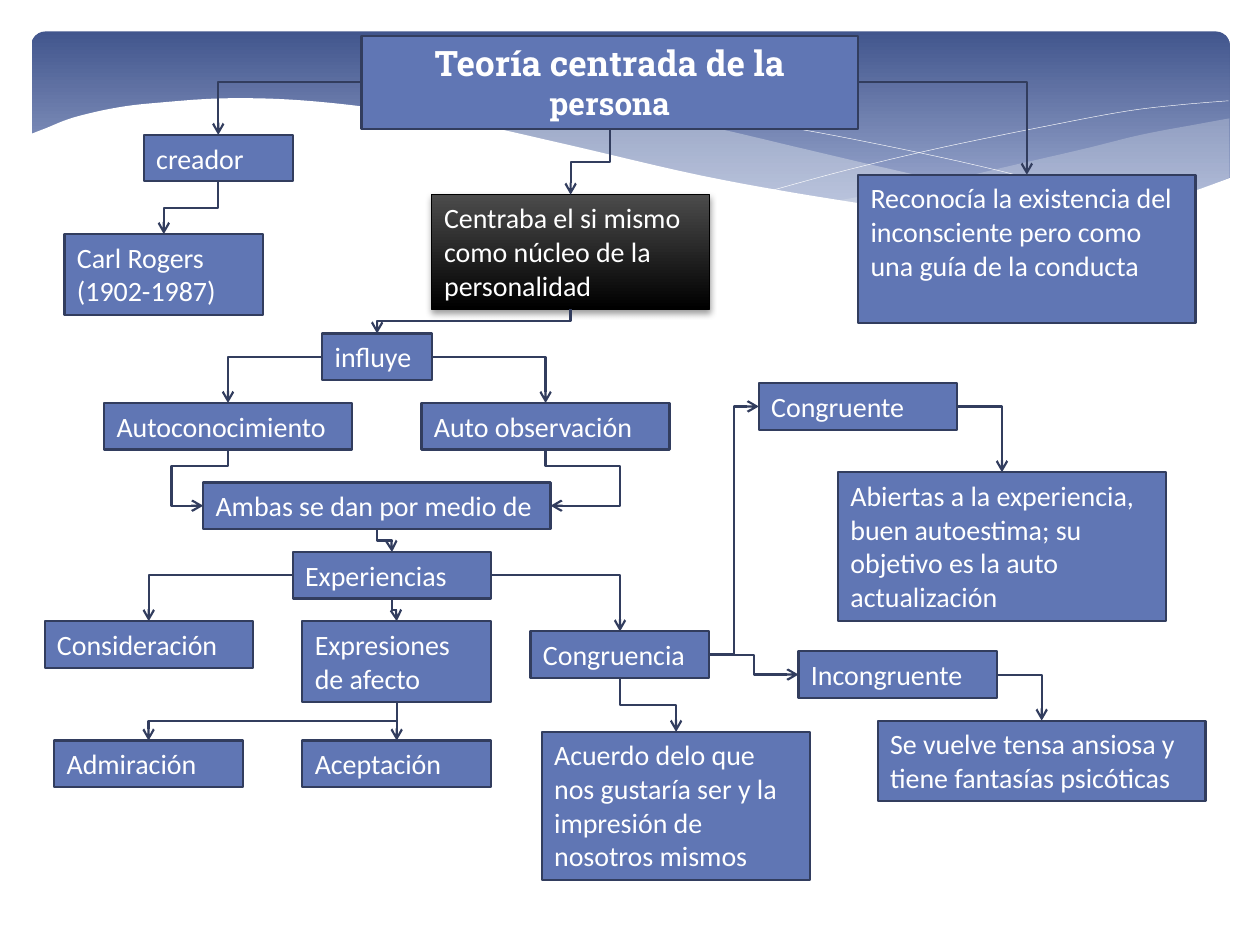
from lxml.etree import SubElement
from pptx import Presentation
from pptx.dml.color import RGBColor
from pptx.enum.shapes import MSO_CONNECTOR as Link, MSO_SHAPE as Preset
from pptx.enum.text import MSO_ANCHOR as Anchor, PP_ALIGN as Align
from pptx.oxml.ns import qn
from pptx.util import Pt

COLORS = {
    "box": "6076B4", "edge": "323D5E", "white": "FFFFFF", "black": "000000",
    "charcoal": "4B4B4B", "band_top": "42568D", "band_end": "A0ADD2", "mist": "E4E9EF",
}
ROW, PADDING = 19.4, 7.2
TOP, LEFT, BOTTOM, RIGHT = range(4)

# Each wave is a chain of smooth edges; corners lie where two edges meet.
RIGHT_WAVE = [
    [(702.5, 67.7), (682.6, 71.3), (652.3, 77), (619.9, 85), (579.6, 94.3),
     (542.2, 103), (508.3, 109.4), (475.9, 115.2)],
    [(475.9, 115.2), (497.5, 118.1), (527, 121), (553.7, 123.1), (578.2, 123.8),
     (601.2, 123.8), (621.4, 122.4), (645.8, 118.8), (668.2, 113.8),
     (683.3, 109.4), (702.5, 101.5)],
]
MIDDLE_WAVE = [
    [(643, 120.2), (602.6, 114.5), (558, 107.3), (508.3, 96.5), (452.9, 83.5),
     (409.7, 73.4), (370.1, 66.2), (334.8, 61.9), (302.4, 59), (273.6, 57.6),
     (247.7, 57.6), (225.4, 59), (205.9, 61.9)],
    [(205.9, 61.9), (246.2, 67.7), (290.9, 76.3), (323.3, 83.5), (381.6, 97.2),
     (432.7, 108), (478.8, 115.9), (519.8, 121), (556.6, 123.8), (589, 124.6),
     (617, 123.1), (643, 120.2)],
]
FALLING_LINE = [[(222.5, 64.8), (236.2, 61.9), (261.4, 59.8), (299.5, 58.3),
                 (337.7, 59.8), (383.8, 63.4), (437.8, 70.6), (500.4, 82.1),
                 (572.4, 97.9), (653, 119.5)]]
RISING_LINE = [[(441.4, 108.7), (483.8, 97.2), (538.6, 84.2), (601.9, 71.3),
                (644.4, 63.4), (675.4, 59.8), (702, 57.6)]]
WHITE_WAVE = [
    [(703.4, 101.5), (676.8, 110.9), (647.3, 118.1), (612, 122.4), (571, 123.1),
     (522.7, 120.2), (466.6, 112.3), (399.6, 100.1), (321.8, 82.1), (262.8, 69.1),
     (210.2, 61.2), (165.6, 56.9), (127.4, 56.2), (95, 58.3), (68.4, 61.2),
     (42.5, 67), (25.9, 73.4), (16.6, 77)],
    [(16.6, 77), (16.6, 161.3)],
    [(16.6, 161.3), (703.4, 161.3)],
]

TITLE = [("Teoría centrada de la ", 20), ("persona", 18)]
# name: (text, left, top, width, rows)
BOXES = {
    "rogers": ("Carl Rogers\n(1902-1987)", 36.9, 133.8, 113.4, 2),
    "creator": ("creador", 82.2, 77.1, 85.1, 1),
    "self": ("Centraba el si mismo como núcleo de la personalidad", 246.7, 111.3, 158.7, 3),
    "unconscious": ("Reconocía la existencia del inconsciente pero como una guía de la conducta",
                    490.4, 99.9, 192.8, 4),
    "influences": ("influye", 184.2, 190.6, 62.6, 1),
    "knowledge": ("Autoconocimiento", 59.5, 230.3, 141.7, 1),
    "observation": ("Auto observación", 240.9, 230.3, 141.7, 1),
    "both": ("Ambas se dan por medio de", 116.1, 275.7, 198.5, 1),
    "experiences": ("Experiencias", 167.3, 315.5, 113.3, 1),
    "congruence": ("Congruencia", 303.2, 360.8, 102.2, 1),
    "affection": ("Expresiones de afecto", 172.8, 355, 107.8, 2),
    "regard": ("Consideración", 25.5, 355, 119.1, 1),
    "admiration": ("Admiración", 31, 423.2, 107.8, 1),
    "acceptance": ("Aceptación", 172.8, 423.2, 107.8, 1),
    "open": ("Abiertas a la experiencia, buen autoestima; su objetivo es la auto actualización",
             478.9, 269.9, 187.3, 4),
    "incongruent": ("Incongruente", 456.3, 372.2, 113.3, 1),
    "congruent": ("Congruente", 433.6, 219, 113.3, 1),
    "agreement": ("Acuerdo delo que nos gustaría ser y la impresión de nosotros mismos",
                  309.6, 418.2, 153.4, 4),
    "tense": ("Se vuelve tensa ansiosa y tiene fantasías psicóticas", 501.6, 411.8, 187.3, 2),
}
# start, its side, end, its side, bend adjustments
LINKS = [
    ("title", LEFT, "creator", TOP),
    ("creator", BOTTOM, "rogers", TOP),
    ("title", BOTTOM, "self", TOP),
    ("title", RIGHT, "unconscious", TOP),
    ("self", BOTTOM, "influences", TOP),
    ("influences", LEFT, "knowledge", TOP),
    ("influences", RIGHT, "observation", TOP),
    ("knowledge", BOTTOM, "both", LEFT, 0.29, 2.27),
    ("observation", BOTTOM, "both", RIGHT, 0.29, 14.9),
    ("both", BOTTOM, "experiences", TOP),
    ("experiences", LEFT, "regard", TOP),
    ("experiences", BOTTOM, "affection", TOP),
    ("experiences", RIGHT, "congruence", TOP),
    ("affection", BOTTOM, "admiration", TOP),
    ("affection", BOTTOM, "acceptance", TOP),
    ("congruence", BOTTOM, "agreement", TOP),
    ("congruence", RIGHT, "congruent", LEFT),
    ("congruence", RIGHT, "incongruent", LEFT),
    ("congruent", RIGHT, "open", TOP),
    ("incongruent", RIGHT, "tense", TOP),
]


def color(name):
    return RGBColor.from_string(COLORS[name])


def fill_gradient(shape, *stops):
    shape.fill.gradient()
    shape.fill.gradient_angle = 270
    for stop, (name, position) in zip(shape.fill.gradient_stops, stops):
        stop.color.rgb, stop.position = color(name), position


def smooth_curve(points, steps=6):
    """Catmull-Rom spline through the points."""
    padded = [points[0], *points, points[-1]]
    curve = [points[0]]
    for a, b, c, d in zip(padded, padded[1:], padded[2:], padded[3:]):
        for t in (step / steps for step in range(1, steps + 1)):
            curve.append(tuple(
                (2 * q + (r - p) * t + (2 * p - 5 * q + 4 * r - s) * t ** 2
                 + (3 * q - p - 3 * r + s) * t ** 3) / 2
                for p, q, r, s in zip(a, b, c, d)))
    return curve


def add_wave(page, edges, fill=None, opacity=100):
    points = [(Pt(x), Pt(y)) for edge in edges for x, y in smooth_curve(edge)]
    builder = page.shapes.build_freeform(*points[0], scale=1.0)
    builder.add_line_segments(points[1:], close=fill is not None)
    wave = builder.convert_to_shape()
    wave.shadow.inherit = False
    if fill is None:
        wave.fill.background()
        wave.line.color.rgb, wave.line.width = color("white"), Pt(0.25)
        return
    wave.fill.solid()
    wave.fill.fore_color.rgb = color(fill)
    wave.line.fill.background()
    if opacity < 100:
        paint = next(wave.element.spPr.iter(qn("a:srgbClr")))
        SubElement(paint, qn("a:alpha"), val=str(opacity * 1000))


def add_text(para, text, size=16, font="Calibri", bold=False, align=Align.LEFT):
    para.alignment = align
    span = para.add_run()
    span.text = text
    span.font.size, span.font.name, span.font.bold = Pt(size), font, bold
    span.font.color.rgb = color("white")


def add_box(page, left, top, width, height):
    box = page.shapes.add_shape(Preset.RECTANGLE, Pt(left), Pt(top), Pt(width), Pt(height))
    box.shadow.inherit = False
    box.fill.solid()
    box.fill.fore_color.rgb = color("box")
    box.line.color.rgb, box.line.width = color("edge"), Pt(1.25)
    box.text_frame.word_wrap = True
    box.text_frame.vertical_anchor = Anchor.TOP
    return box


def darken(box):
    """Give the key box its black gradient and soft shadow."""
    fill_gradient(box, ("charcoal", 0), ("black", 1))
    box.line.color.rgb, box.line.width = color("black"), Pt(0.75)
    shadow = SubElement(box.element.spPr.find(qn("a:effectLst")), qn("a:outerShdw"),
                        blurRad=str(Pt(4)), dist=str(Pt(2)), dir="5400000", rotWithShape="0")
    paint = SubElement(shadow, qn("a:srgbClr"), val=COLORS["black"])
    SubElement(paint, qn("a:alpha"), val="38000")


def add_link(page, start, start_side, end, end_side, *bends):
    link = page.shapes.add_connector(Link.ELBOW, 0, 0, 0, 0)
    link.begin_connect(start, start_side)
    link.end_connect(end, end_side)
    link.line.color.rgb, link.line.width = color("edge"), Pt(1.25)
    props = link.element.spPr
    SubElement(props.find(qn("a:ln")), qn("a:tailEnd"), type="arrow")
    SubElement(props, qn("a:effectLst"))
    geometry = props.find(qn("a:prstGeom"))
    if start_side == BOTTOM:  # the preset leaves sideways, so turn it a quarter
        dx, dy = link.end_x - link.begin_x, link.end_y - link.begin_y
        middle_x, middle_y = link.begin_x + dx / 2, link.begin_y + dy / 2
        link.width, link.height = dy, abs(dx)
        link.left, link.top = int(middle_x - dy / 2), int(middle_y - abs(dx) / 2)
        frame = props.find(qn("a:xfrm"))
        frame.set("rot", "16200000" if dx > 0 else "5400000")
        frame.set("flipH", "1" if dx > 0 else "0")
        frame.set("flipV", "0")
    elif end_side == TOP:
        geometry.set("prst", "bentConnector2")
    if bends:
        geometry.set("prst", "bentConnector4")
        guides = geometry.find(qn("a:avLst"))
        for number, bend in enumerate(bends, 1):
            SubElement(guides, qn("a:gd"), name=f"adj{number}", fmla=f"val {round(bend * 100000)}")


def main():
    deck = Presentation()
    deck.slide_width, deck.slide_height = Pt(720), Pt(540)
    page = deck.slides.add_slide(deck.slide_layouts[6])

    band = page.shapes.add_shape(Preset.ROUNDED_RECTANGLE, Pt(18), Pt(18), Pt(684.7), Pt(112.3))
    band.adjustments[0] = 0.07
    band.shadow.inherit = False
    band.line.fill.background()
    fill_gradient(band, ("band_top", 0), ("band_end", 0.9))
    add_wave(page, RIGHT_WAVE, fill="mist", opacity=29)
    add_wave(page, MIDDLE_WAVE, fill="mist", opacity=40)
    add_wave(page, FALLING_LINE)
    add_wave(page, RISING_LINE)
    add_wave(page, WHITE_WAVE, fill="white")

    boxes = {"title": add_box(page, 206.6, 20.4, 283.7, 53.3)}
    for text, size in TITLE:
        add_text(boxes["title"].text_frame.paragraphs[0], text, size=size,
                 font="Roboto Slab", bold=True, align=Align.CENTER)
    for name, (text, left, top, width, rows) in BOXES.items():
        box = boxes[name] = add_box(page, left, top, width, rows * ROW + PADDING)
        for number, line in enumerate(text.split("\n")):
            frame = box.text_frame
            add_text(frame.add_paragraph() if number else frame.paragraphs[0], line)
    darken(boxes["self"])

    for start, start_side, end, end_side, *bends in LINKS:
        add_link(page, boxes[start], start_side, boxes[end], end_side, *bends)
    deck.save("out.pptx")


if __name__ == "__main__":
    main()
